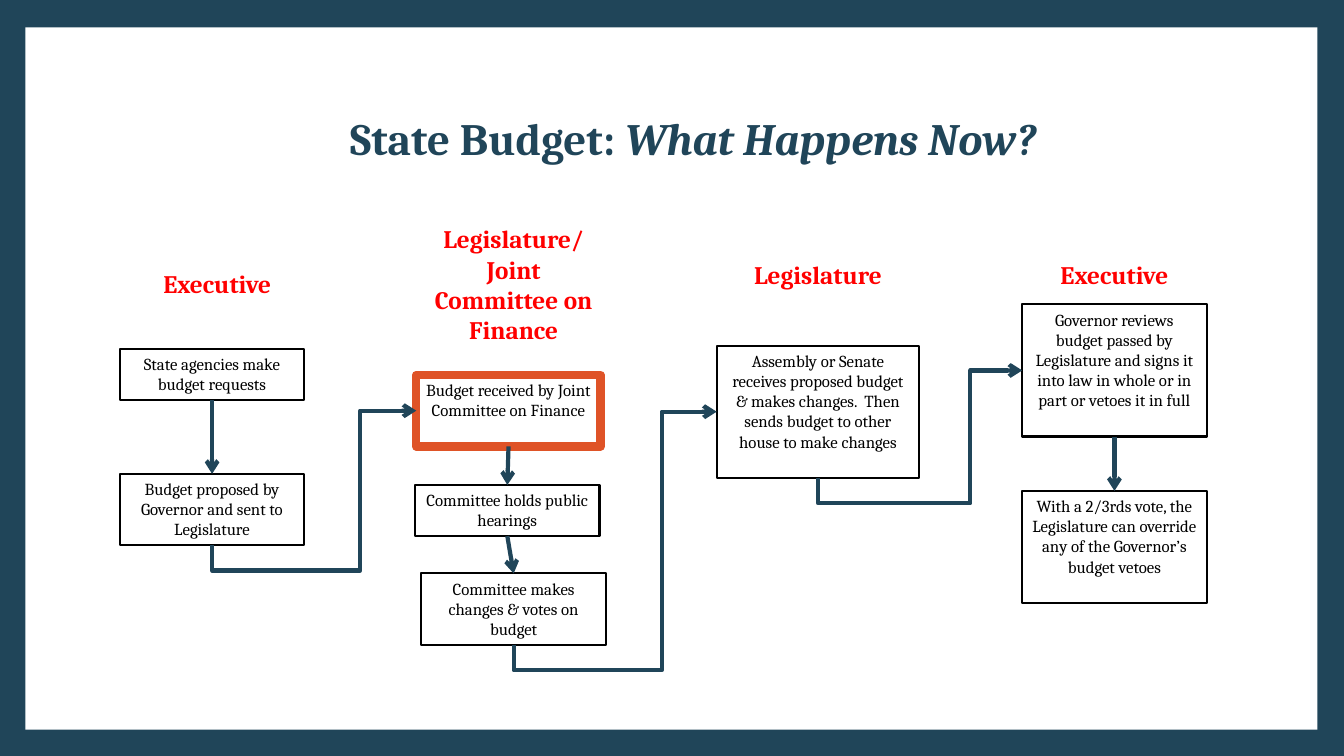
from dataclasses import dataclass

from lxml import etree
from pptx import Presentation
from pptx.dml.color import RGBColor
from pptx.enum.shapes import MSO_CONNECTOR, MSO_SHAPE
from pptx.enum.text import MSO_ANCHOR, MSO_AUTO_SIZE, PP_ALIGN
from pptx.oxml.ns import qn
from pptx.shapes.autoshape import Shape
from pptx.shapes.connector import Connector
from pptx.slide import Slide
from pptx.text.text import Font
from pptx.util import Cm, Pt

RECTANGLE = MSO_SHAPE.RECTANGLE
STRAIGHT = MSO_CONNECTOR.STRAIGHT
ELBOW = MSO_CONNECTOR.ELBOW
TOP = MSO_ANCHOR.TOP
MIDDLE = MSO_ANCHOR.MIDDLE
GROW = MSO_AUTO_SIZE.SHAPE_TO_FIT_TEXT
CENTER = PP_ALIGN.CENTER

NAVY = RGBColor(0x20, 0x45, 0x59)
WHITE = RGBColor(0xFF, 0xFF, 0xFF)
BLACK = RGBColor(0x00, 0x00, 0x00)
RED = RGBColor(0xFF, 0x00, 0x00)
ORANGE = RGBColor(0xDF, 0x53, 0x27)

FONT_NAME = "Cambria"
TOP_SIDE, LEFT_SIDE, BOTTOM_SIDE = 0, 1, 2
STEP_WIDTH = 4.65
ELBOW_DROP = Cm(0.64)


@dataclass(frozen=True)
class Step:
    text: str
    left: float
    top: float
    height: float
    width: float = STEP_WIDTH
    outline: RGBColor = BLACK
    outline_width: float = 1.5


@dataclass(frozen=True)
class Heading:
    text: str
    left: float
    top: float
    height: float = 1.02


@dataclass(frozen=True)
class Handover:
    source: str
    target: str
    turn: float


STEPS = {
    "requests": Step("State agencies make budget requests", 3.02, 8.79, 1.29),
    "proposal": Step("Budget proposed by Governor and sent to Legislature", 3.02, 11.94, 1.8),
    "receipt": Step("Budget received by Joint Committee on Finance", 10.49, 9.45, 1.8,
                    outline=ORANGE, outline_width=6),
    "hearings": Step("Committee holds public hearings", 10.46, 12.22, 1.29),
    "vote": Step("Committee makes changes & votes on budget", 10.62, 14.45, 1.8),
    "houses": Step("Assembly or Senate receives proposed budget & makes changes.  "
                   "Then sends budget to other house to make changes",
                   18.06, 8.71, 3.33, width=5.11),
    "review": Step("Governor reviews budget passed by Legislature and signs it into law "
                   "in whole or in part or vetoes it in full", 25.76, 7.67, 3.33),
    "override": Step("With a 2/3rds vote, the Legislature can override any of the "
                     "Governor’s budget vetoes", 25.76, 12.37, 2.82),
}

HEADINGS = [
    Heading("Executive", 3.15, 6.63),
    Heading("Legislature/ Joint Committee on Finance", 10.62, 5.51, 3.33),
    Heading("Legislature", 18.29, 6.4),
    Heading("Executive", 25.76, 6.4),
]

DOWNWARD = [
    ("requests", "proposal"),
    ("receipt", "hearings"),
    ("hearings", "vote"),
    ("review", "override"),
]

HANDOVERS = [
    Handover("proposal", "receipt", 3.73),
    Handover("vote", "houses", 3.73),
    Handover("houses", "review", 3.84),
]


def style_font(font: Font, size: float, color: RGBColor, bold: bool = False) -> None:
    font.name = FONT_NAME
    font.size = Pt(size)
    font.bold = bold
    font.color.rgb = color


def fill_text(box: Shape, text: str, size: float, color: RGBColor, bold: bool = False) -> None:
    frame = box.text_frame
    frame.text = text
    frame.word_wrap = True
    frame.auto_size = GROW
    frame.vertical_anchor = TOP
    para = frame.paragraphs[0]
    para.alignment = CENTER
    style_font(para.runs[0].font, size, color, bold)


def draw_panel(page: Slide) -> None:
    panel = page.shapes.add_shape(RECTANGLE, Cm(0.64), Cm(0.69), Cm(32.56), Cm(17.7))
    panel.shadow.inherit = False
    panel.fill.solid()
    panel.fill.fore_color.rgb = WHITE
    panel.line.fill.background()
    page.shapes.title.element.addprevious(panel.element)


def write_title(page: Slide) -> None:
    title = page.shapes.title
    title.left, title.top, title.width, title.height = Cm(3.76), Cm(1.68), Cm(27.43), Cm(3.76)
    title.text_frame.vertical_anchor = MIDDLE
    para = title.text_frame.paragraphs[0]
    para.alignment = CENTER
    para.line_spacing = 0.9
    for text, italic in (("State Budget: ", False), ("What Happens Now?", True)):
        span = para.add_run()
        span.text = text
        style_font(span.font, 32, NAVY, bold=True)
        span.font.italic = italic


def draw_step(page: Slide, step: Step) -> Shape:
    box = page.shapes.add_shape(
        RECTANGLE, Cm(step.left), Cm(step.top), Cm(step.width), Cm(step.height))
    box.shadow.inherit = False
    box.fill.solid()
    box.fill.fore_color.rgb = WHITE
    box.line.color.rgb = step.outline
    box.line.width = Pt(step.outline_width)
    fill_text(box, step.text, 12, BLACK)
    return box


def draw_heading(page: Slide, heading: Heading) -> None:
    box = page.shapes.add_textbox(
        Cm(heading.left), Cm(heading.top), Cm(STEP_WIDTH), Cm(heading.height))
    fill_text(box, heading.text, 18, RED, bold=True)


def join(page: Slide, kind: MSO_CONNECTOR, source: Shape, target: Shape, side: int) -> Connector:
    arrow = page.shapes.add_connector(kind, 0, 0, 0, 0)
    arrow.begin_connect(source, BOTTOM_SIDE)
    arrow.end_connect(target, side)
    arrow.line.color.rgb = NAVY
    arrow.line.width = Pt(3)
    properties = arrow.element.spPr
    etree.SubElement(properties.find(qn("a:ln")), qn("a:tailEnd"), type="arrow")
    etree.SubElement(properties, qn("a:effectLst"))
    return arrow


def draw_handover(page: Slide, source: Shape, target: Shape, turn: float) -> None:
    arrow = join(page, ELBOW, source, target, LEFT_SIDE)
    run = arrow.end_x - arrow.begin_x
    rise = arrow.begin_y - arrow.end_y
    center_x = (arrow.begin_x + arrow.end_x) // 2
    center_y = (arrow.begin_y + arrow.end_y) // 2
    arrow.left, arrow.top = center_x - rise // 2, center_y - run // 2
    arrow.width, arrow.height = rise, run
    properties = arrow.element.spPr
    frame = properties.find(qn("a:xfrm"))
    for name, value in (("rot", "5400000"), ("flipH", "1"), ("flipV", "1")):
        frame.set(name, value)
    geometry = properties.find(qn("a:prstGeom"))
    geometry.set("prst", "bentConnector4")
    guides = geometry.find(qn("a:avLst"))
    for name, share in (("adj1", -ELBOW_DROP / rise), ("adj2", Cm(turn) / run)):
        etree.SubElement(guides, qn("a:gd"), name=name, fmla=f"val {round(share * 100000)}")


def main() -> None:
    deck = Presentation()
    deck.slide_width, deck.slide_height = Cm(33.87), Cm(19.05)
    page = deck.slides.add_slide(deck.slide_layouts.get_by_name("Title Only"))
    page.background.fill.solid()
    page.background.fill.fore_color.rgb = NAVY
    draw_panel(page)
    write_title(page)
    boxes = {name: draw_step(page, step) for name, step in STEPS.items()}
    for source, target in DOWNWARD:
        join(page, STRAIGHT, boxes[source], boxes[target], TOP_SIDE)
    for handover in HANDOVERS:
        draw_handover(page, boxes[handover.source], boxes[handover.target], handover.turn)
    for heading in HEADINGS:
        draw_heading(page, heading)
    deck.save("out.pptx")


if __name__ == "__main__":
    main()
